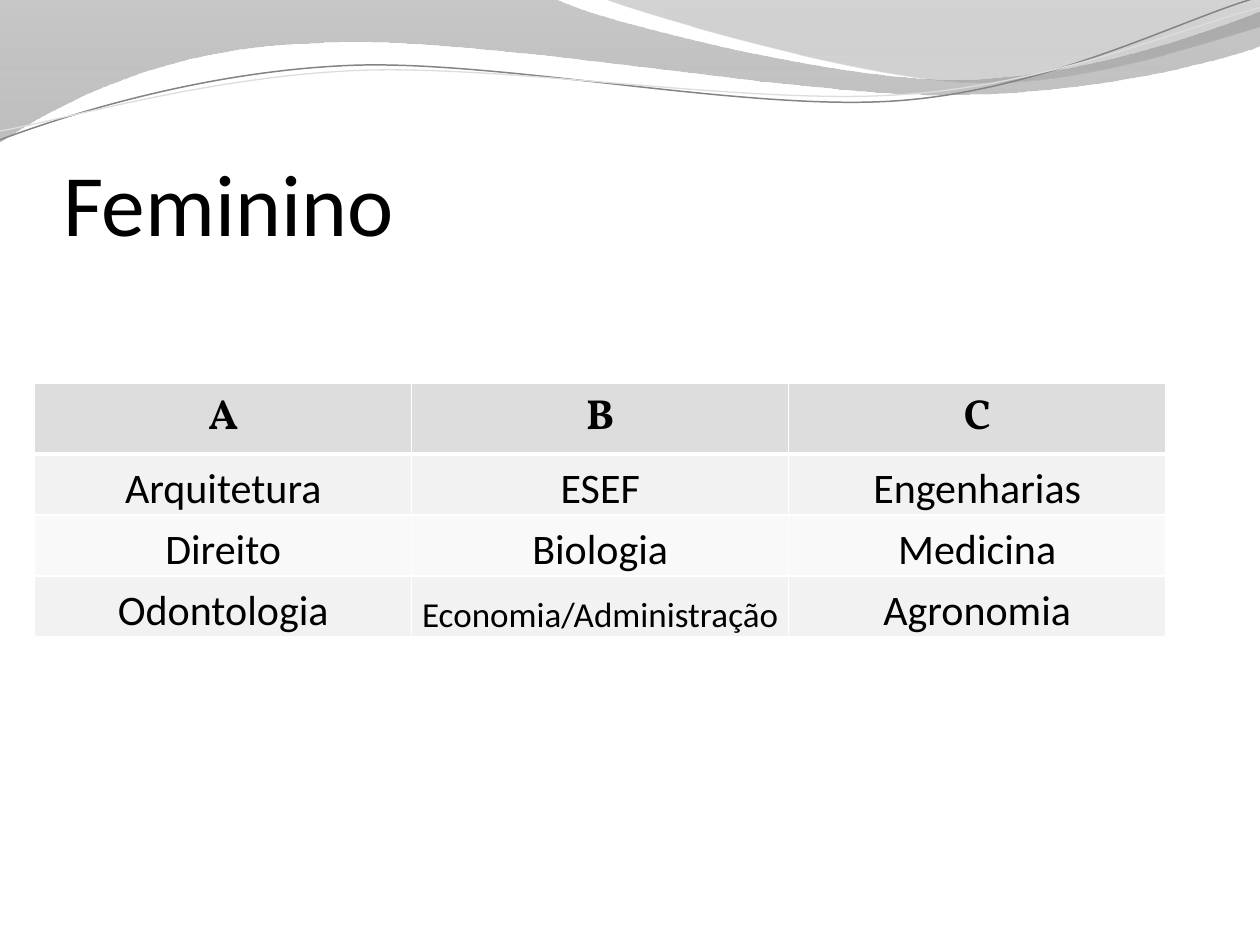
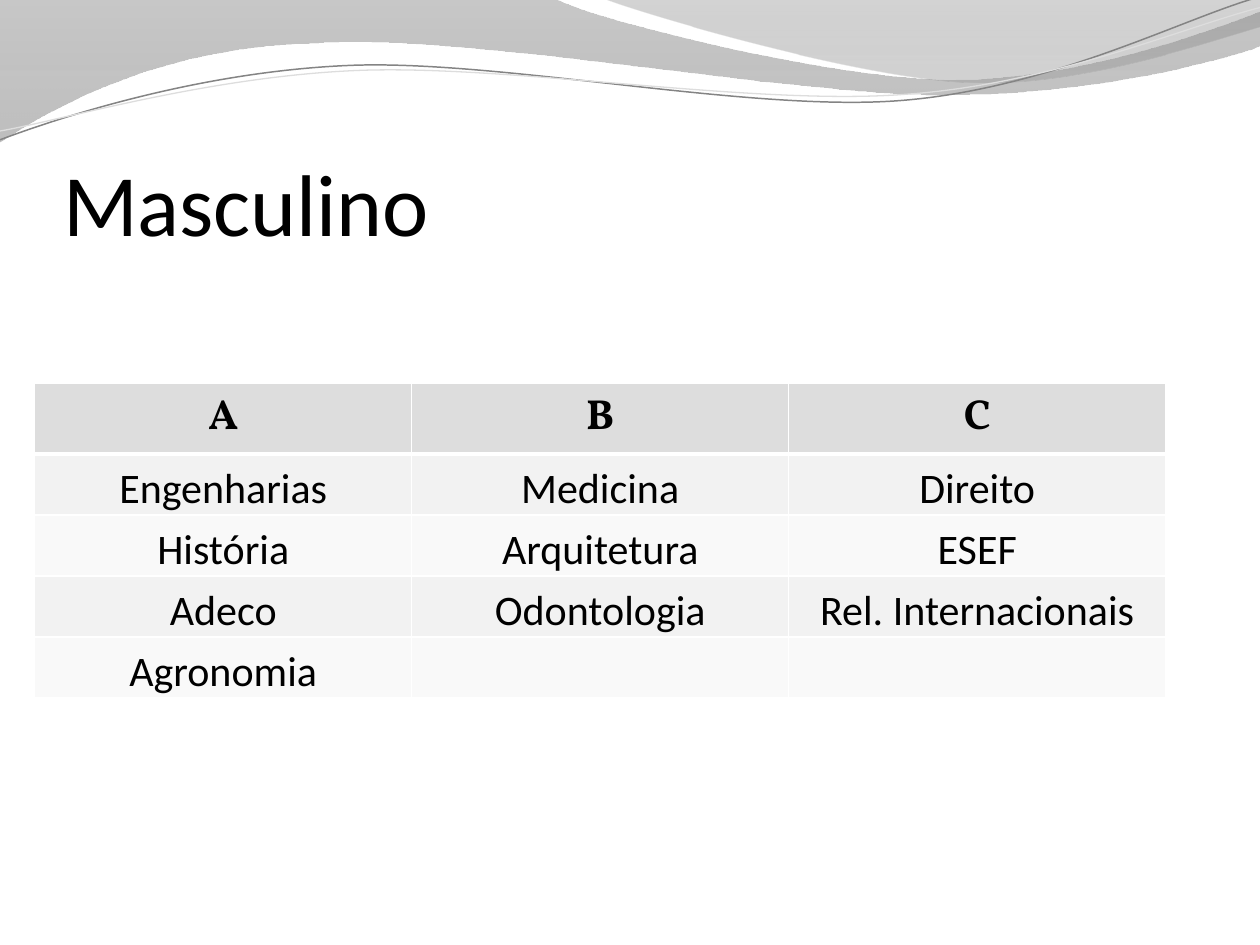
import pptx
import pptx.dml.color
import pptx.enum.text
import pptx.oxml.ns
import pptx.util
from lxml import etree

Cm, Pt = pptx.util.Cm, pptx.util.Pt
RGB = pptx.dml.color.RGBColor
ALIGN, ANCHOR = pptx.enum.text.PP_ALIGN, pptx.enum.text.MSO_ANCHOR
qn = pptx.oxml.ns.qn

BLACK = RGB(0x00, 0x00, 0x00)
WHITE = RGB(0xFF, 0xFF, 0xFF)
HEAD = RGB(0xDD, 0xDD, 0xDD)
BANDS = RGB(0xF2, 0xF2, 0xF2), RGB(0xF9, 0xF9, 0xF9)
DARK = RGB(0x6F, 0x6F, 0x6F)
MID = RGB(0x84, 0x84, 0x84)
SOFT = RGB(0x88, 0x88, 0x88)
PALE = RGB(0x9D, 0x9D, 0x9D)

SLIDES = [
    ("Feminino", [
        ("A", "B", "C"),
        ("Arquitetura", "ESEF", "Engenharias"),
        ("Direito", "Biologia", "Medicina"),
        ("Odontologia", "Economia/Administração", "Agronomia"),
    ]),
    ("Masculino", [
        ("A", "B", "C"),
        ("Engenharias", "Medicina", "Direito"),
        ("História", "Arquitetura", "ESEF"),
        ("Adeco", "Odontologia", "Rel. Internacionais"),
        ("Agronomia", "", ""),
    ]),
]
SMALL = {"Economia/Administração": Pt(20)}

# Wave outlines in inches: two numbers make a line, six make a Bézier curve.
# Bands list gradient stops as (position, colour, opacity in percent).
BAND_WAVES = [
    ([(0, 0), (4.4, -0.01), (4.76, 0.17, 6.64, 0.63, 7.58, 0.63),
      (8.53, 0.63, 9.58, 0.26, 10, 0.09), (10.01, 0.36),
      (9.83, 0.44, 8.7, 0.76, 7.46, 0.75), (6.22, 0.75, 3.82, 0.28, 2.57, 0.34),
      (1.29, 0.36, 0.46, 0.83, -0.01, 1.13), (0, 0)],
     [(0, MID, 45), (1, SOFT, 55)]),
    ([(4.79, -0.01), (5.09, 0.11, 6.82, 0.62, 7.69, 0.65),
      (8.56, 0.69, 9.61, 0.32, 10, 0.21), (10, 0), (4.79, -0.01)],
     [(0, DARK, 30), (0.8, PALE, 45)]),
]
LINE_WAVES = [
    ([(0, 1.11), (0.48, 0.93, 1.58, 0.57, 2.77, 0.52),
      (3.95, 0.47, 5.93, 0.89, 7.13, 0.8), (8.33, 0.71, 9.38, 0.15, 9.98, -0.02)],
     MID, Pt(0.85)),
    ([(0, 1.04), (0.47, 0.96, 1.64, 0.61, 2.83, 0.56),
      (4.03, 0.51, 5.97, 0.84, 7.17, 0.75), (8.36, 0.67, 9.41, 0.21, 10, 0.06)],
     HEAD, Pt(0.75)),
]
INCH = 2.54

TITLE_BOX = dict(left=Cm(1.27), top=Cm(1.94), width=Cm(22.86), height=Cm(3.18))
TITLE_FRAME = dict(vertical_anchor=ANCHOR.BOTTOM, margin_left=0, margin_right=0,
                   margin_top=Cm(0.13), margin_bottom=0)
TITLE_FONT = dict(name="Calibri", size=Pt(50), bold=False)
HEAD_FONT = dict(name="Vollkorn", size=Pt(24), bold=True)
BODY_FONT = dict(name="Calibri", size=Pt(24), bold=False)
BODY_CELL = dict(vertical_anchor=ANCHOR.BOTTOM, margin_left=Cm(0.03),
                 margin_right=Cm(0.03), margin_top=Cm(0.03), margin_bottom=0)
GRID_LEFT, GRID_TOP = Cm(0.7), Cm(7.72)
COL_WIDTH, ROW_HEIGHT = Cm(7.6), Cm(1.23)
THIN, THICK = Pt(1), Pt(3)


def assign(item, values):
    for name, value in values.items():
        setattr(item, name, value)


def paint(font, values):
    assign(font, values)
    font.color.rgb = BLACK


def bend(wave, path):
    """Join each three line segments that hold a curve into one Bézier."""
    lines = iter(list(wave.element.iter(qn("a:lnTo"))))
    for part in path[1:]:
        group = [next(lines) for _ in range(len(part) // 2)]
        if len(group) == 3:
            curve = etree.Element(qn("a:cubicBezTo"))
            group[0].addprevious(curve)
            for line in group:
                curve.append(line[0])
                line.getparent().remove(line)


def draw_wave(slide, path, close):
    points = [(Cm(part[k] * INCH), Cm(part[k + 1] * INCH))
              for part in path for k in range(0, len(part), 2)]
    pen = slide.shapes.build_freeform(*points[0])
    pen.add_line_segments(points[1:], close=close)
    wave = pen.convert_to_shape()
    bend(wave, path)
    wave.shadow.inherit = False
    return wave


def shade(wave, stops):
    wave.line.fill.background()
    wave.fill.gradient()
    wave.fill.gradient_angle = 270
    for stop, (place, color, _) in zip(wave.fill.gradient_stops, stops):
        stop.position = place
        stop.color.rgb = color
    for node, (_, _, alpha) in zip(wave.element.iter(qn("a:srgbClr")), stops):
        etree.SubElement(node, qn("a:alpha"), val=str(alpha * 1000))


def add_waves(slide, master):
    """Draw the header waves and move them behind the master's placeholders."""
    waves = []
    for path, stops in BAND_WAVES:
        wave = draw_wave(slide, path, True)
        shade(wave, stops)
        waves.append(wave)
    for path, color, width in LINE_WAVES:
        wave = draw_wave(slide, path, False)
        wave.fill.background()
        wave.line.color.rgb = color
        wave.line.width = width
        waves.append(wave)
    for count, wave in enumerate(waves):
        wave.element.xpath("p:nvSpPr/p:cNvPr")[0].set("id", str(20 + count))
        master.shapes.element.insert(2 + count, wave.element)


def add_borders(cell, row):
    props = cell._tc.get_or_add_tcPr()
    widths = dict(lnL=THIN, lnR=THIN, lnT=THICK if row == 1 else THIN,
                  lnB=THICK if row == 0 else THIN)
    for tag, width in widths.items():
        line = etree.SubElement(props, qn("a:" + tag), w=str(width))
        fill = etree.SubElement(line, qn("a:solidFill"))
        etree.SubElement(fill, qn("a:srgbClr"), val=str(WHITE))


def fill_cell(cell, text, row):
    add_borders(cell, row)
    cell.fill.solid()
    cell.fill.fore_color.rgb = BANDS[(row - 1) % 2] if row else HEAD
    if text:
        if row:
            assign(cell, BODY_CELL)
        para = cell.text_frame.paragraphs[0]
        para.alignment = ALIGN.CENTER
        run = para.add_run()
        run.text = text
        paint(run.font, BODY_FONT if row else HEAD_FONT)
        run.font.size = SMALL.get(text, run.font.size)


def add_grid(slide, rows):
    cols = len(rows[0])
    table = slide.shapes.add_table(
        len(rows), cols, GRID_LEFT, GRID_TOP,
        COL_WIDTH * cols, ROW_HEIGHT * len(rows)).table
    for col in table.columns:
        col.width = COL_WIDTH
    for r, texts in enumerate(rows):
        table.rows[r].height = ROW_HEIGHT
        for c, text in enumerate(texts):
            fill_cell(table.cell(r, c), text, r)


def add_title(slide, text):
    title = slide.shapes.title
    assign(title, TITLE_BOX)
    assign(title.text_frame, TITLE_FRAME)
    title.text_frame.text = text
    para = title.text_frame.paragraphs[0]
    para.alignment = ALIGN.LEFT
    paint(para.runs[0].font, TITLE_FONT)


def main():
    deck = pptx.Presentation()
    deck.slide_width, deck.slide_height = Cm(25.4), Cm(19.05)
    layout = deck.slide_layouts.get_by_name("Title Only")
    for number, (title, rows) in enumerate(SLIDES):
        slide = deck.slides.add_slide(layout)
        if number == 0:
            add_waves(slide, deck.slide_master)
        add_title(slide, title)
        add_grid(slide, rows)
    deck.save("out.pptx")


if __name__ == "__main__":
    main()
